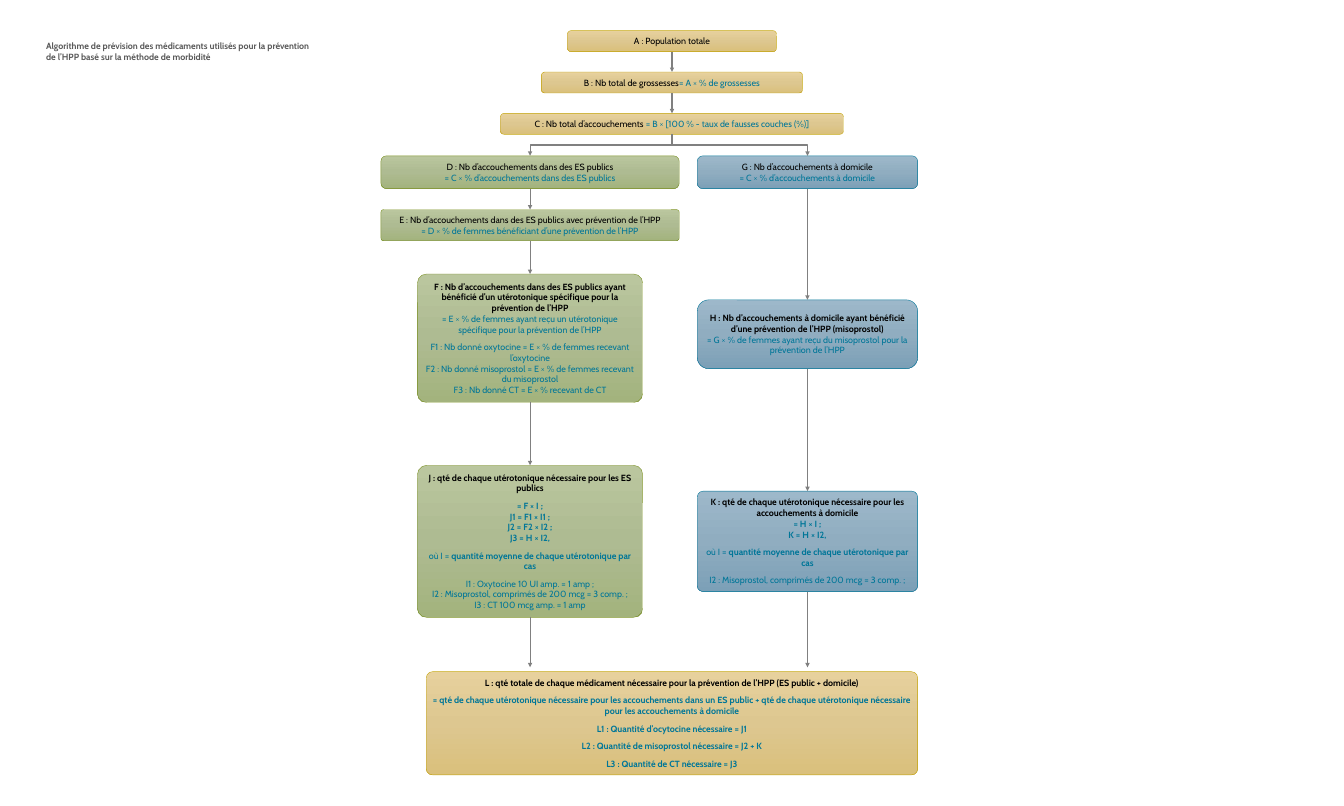
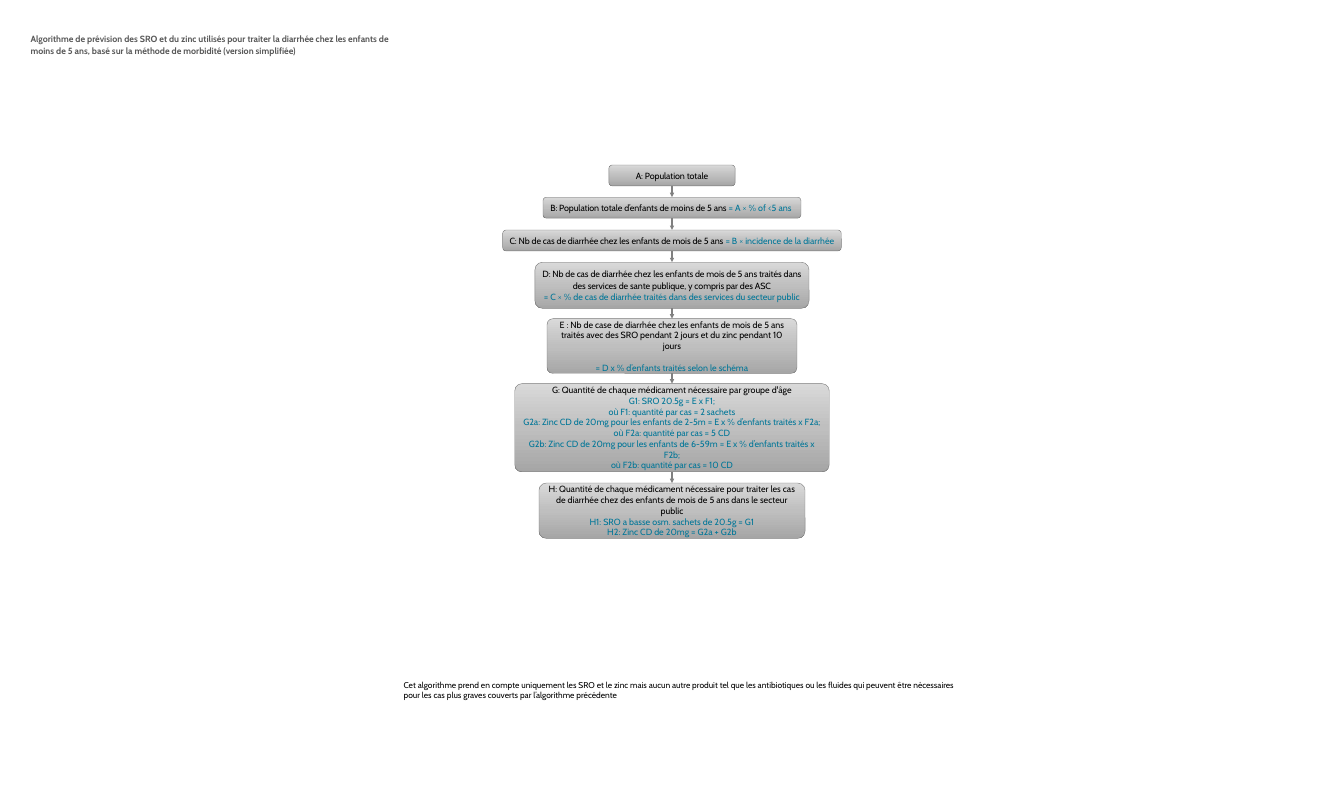
from copy import deepcopy

from lxml import etree
from pptx import Presentation
from pptx.dml.color import RGBColor
from pptx.enum.shapes import MSO_CONNECTOR, MSO_SHAPE
from pptx.enum.text import MSO_ANCHOR, PP_ALIGN
from pptx.oxml.ns import qn
from pptx.util import Inches, Pt

# Shared style
STRAIGHT, ELBOW = MSO_CONNECTOR.STRAIGHT, MSO_CONNECTOR.ELBOW
ROUND = MSO_SHAPE.ROUNDED_RECTANGLE
MIDDLE, TOP = MSO_ANCHOR.MIDDLE, MSO_ANCHOR.TOP
CENTER, LEFT = PP_ALIGN.CENTER, PP_ALIGN.LEFT
FONT = "Cabin"
rgb = RGBColor.from_string
INK, BLUE, HEAD, ROPE = map(rgb, ("000000", "007698", "595959", "808080"))

# Palettes: three gradient stops, then the outline
GOLD = tuple(map(rgb, ("E7D19D", "DDC790", "DAC07C", "C2A204")))
GREEN = tuple(map(rgb, ("BAC69E", "AEBB92", "A3B37D", "788E1E")))
SEA = tuple(map(rgb, ("9DB8CA", "90ADC0", "7CA0B7", "007698")))
GRAY = tuple(map(rgb, ("D9D9D9", "BFBFBF", "A6A6A6", "737373")))

# Text formats
PLAIN = {}
TIGHT = {"track": -0.1}
BOLD = {"bold": True}
CALC = {"color": BLUE}
STRONG = {"color": BLUE, "bold": True}
ARIAL = {"color": BLUE, "font": "Arial"}
TITLE = {"color": HEAD, "bold": True}


def write(para, text, color=INK, bold=False, font=FONT, size=12, track=0):
    """Add text to a paragraph; a newline becomes a line break."""
    for num, line in enumerate(text.split("\n")):
        if num:
            para.add_line_break()
        if line:
            run = para.add_run()
            run.text = line
            run.font.name, run.font.size = font, Pt(size)
            run.font.bold = bold
            run.font.color.rgb = color
            if track:
                run._r.get_or_add_rPr().set("spc", str(round(track * 100)))


class Deck:
    def __init__(self):
        self.prs = Presentation()
        self.prs.slide_width, self.prs.slide_height = Inches(25), Inches(15)
        self.slide = None

    def start(self):
        self.slide = self.prs.slides.add_slide(self.prs.slide_layouts[6])

    def fill(self, shape, paras, align, after=0, lead=None):
        frame = shape.text_frame
        frame.word_wrap = True
        for num, parts in enumerate(paras):
            para = frame.add_paragraph() if num else frame.paragraphs[0]
            para.alignment = align
            para.space_after = Pt(after)
            if lead:
                para.line_spacing = lead
            for text, form in parts:
                write(para, text, **form)

    def box(self, mid, top, width, height, look, paras, curve=0.1667, **gaps):
        """Rounded box centred on mid, with a vertical gradient."""
        shape = self.slide.shapes.add_shape(
            ROUND, Inches(mid - width / 2), Inches(top), Inches(width), Inches(height))
        shape.adjustments[0] = curve
        shape.shadow.inherit = False
        shape.fill.gradient()
        shape.fill.gradient_angle = 270
        stops = shape._element.spPr.find(qn("a:gradFill")).find(qn("a:gsLst"))
        stops.insert(1, deepcopy(stops[0]))
        for stop, color, place in zip(shape.fill.gradient_stops, look, (0, 0.5, 1)):
            stop.color.rgb, stop.position = color, place
        shape.line.color.rgb, shape.line.width = look[3], Pt(0.5)
        frame = shape.text_frame
        frame.vertical_anchor = MIDDLE
        frame.margin_left = frame.margin_right = Inches(0.07)
        frame.margin_top = frame.margin_bottom = Inches(0.07)
        self.fill(shape, paras, CENTER, **gaps)
        return shape

    def note(self, left, top, width, height, text, lead=None, **form):
        shape = self.slide.shapes.add_textbox(
            Inches(left), Inches(top), Inches(width), Inches(height))
        shape.text_frame.vertical_anchor = TOP
        self.fill(shape, [[(text, form)]], LEFT, lead=lead)

    def wire(self, kind, *ends):
        line = self.slide.shapes.add_connector(kind, *map(int, ends))
        line.line.color.rgb, line.line.width = ROPE, Pt(1.5)
        props = line._element.spPr
        etree.SubElement(props.find(qn("a:ln")), qn("a:tailEnd"), type="triangle")
        etree.SubElement(props, qn("a:effectLst"))
        return line

    def link(self, *boxes):
        """Straight arrows down a chain of boxes."""
        for high, low in zip(boxes, boxes[1:]):
            line = self.wire(STRAIGHT, 0, 0, 0, 0)
            line.begin_connect(high, 2)
            line.end_connect(low, 0)

    def drop(self, box, end):
        """Arrow from the bottom of a box to a free height."""
        mid = box.left + box.width // 2
        line = self.wire(STRAIGHT, mid, box.top + box.height, mid, Inches(end))
        line.begin_connect(box, 2)

    def bend(self, high, low):
        """Elbow arrow that leaves downwards: a turned connector."""
        x1, x2 = (box.left + box.width / 2 for box in (high, low))
        y1, y2 = high.top + high.height, low.top
        mid, level = (x1 + x2) / 2, (y1 + y2) / 2
        side = 1 if x2 > x1 else -1
        half, reach = side * (y2 - y1) / 2, abs(x2 - x1) / 2
        line = self.wire(ELBOW, mid + half, level - reach, mid - half, level + reach)
        turn = 270 if side > 0 else 90
        line._element.spPr.find(qn("a:xfrm")).set("rot", str(turn * 60000))


def birth(deck):
    """Medicines for the prevention of HPP."""
    deck.start()
    mid, west, east = 12.5, 9.86, 15.02

    def box(*spot, **more):
        return deck.box(*spot, after=9, **more)

    # Trunk
    a = box(mid, 0.57, 3.89, 0.39, GOLD, [[("A : Population totale", PLAIN)]])
    b = box(mid, 1.34, 4.86, 0.39, GOLD, [[
        ("B : Nb total de grossesses", PLAIN), ("= A × % de grossesses", CALC)]])
    c = box(mid, 2.11, 6.38, 0.39, GOLD, [[
        ("C : Nb total d’accouchements ", PLAIN),
        ("= B × [100 % - taux de fausses couches (%)]", CALC)]])

    # Public branch
    d = box(west, 2.9, 5.55, 0.61, GREEN, [[
        ("D : Nb d’accouchements dans des ES publics\n", PLAIN),
        ("= C × % d’accouchements dans des ES publics", CALC)]])
    e = box(west, 3.9, 5.55, 0.58, GREEN, [[
        ("E : Nb d’accouchements dans des ES publics avec prévention de l’HPP\n", PLAIN),
        ("= D × % de femmes bénéficiant d’une prévention de l’HPP", CALC)]], curve=0.09)
    f = box(west, 5.1, 4.19, 2.39, GREEN, [
        [("F : Nb d’accouchements dans des ES publics ayant bénéficié d’un "
          "utérotonique spécifique pour la prévention de l’HPP\n", BOLD),
         ("= E × % de femmes ayant reçu un utérotonique spécifique pour la "
          "prévention de l’HPP", CALC)],
        [("F1 : Nb donné oxytocine = E × % de femmes recevant l’oxytocine\n"
          "F2 : Nb donné misoprostol = E × % de femmes recevant du misoprostol\n"
          "F3 : Nb donné CT = E × % recevant de CT", CALC)]], curve=0.07)
    mean = [("où I = ", CALC),
            ("quantité moyenne de chaque utérotonique par cas", STRONG)]
    j = box(west, 8.66, 4.19, 2.83, GREEN, [
        [("J : qté de chaque utérotonique nécessaire pour les ES publics", BOLD)],
        [("= F × I ;\nJ1 = F1 × I1 ;\nJ2 = F2 × I2 ;\nJ3 = H × I2,", STRONG)],
        mean,
        [("I1 : Oxytocine 10 UI amp. = 1 amp ;\n"
          "I2 : Misoprostol, comprimés de 200 mcg = 3 comp. ;\n"
          "I3 : CT 100 mcg amp. = 1 amp", CALC)]], curve=0.06)

    # Home branch
    g = box(east, 2.9, 4.1, 0.61, SEA, [[
        ("G : Nb d’accouchements à domicile\n", PLAIN),
        ("= C × % d’accouchements à domicile", CALC)]])
    h = box(east, 5.58, 4.1, 1.28, SEA, [[
        ("H : Nb d’accouchements à domicile ayant bénéficié d’une prévention "
         "de l’HPP (misoprostol)\n", BOLD),
        ("= G × % de femmes ayant reçu du misoprostol pour la prévention de l’HPP",
         CALC)]])
    k = box(east, 9.14, 4.1, 1.87, SEA, [
        [("K : qté de chaque utérotonique nécessaire pour les accouchements "
          "à domicile\n", BOLD),
         ("= H × I ;\nK = H × I2,", STRONG)],
        mean,
        [("I2 : Misoprostol, comprimés de 200 mcg = 3 comp. ;", CALC)]], curve=0.06)

    # Total
    box(mid, 12.5, 9.14, 1.92, GOLD, [
        [("L : qté totale de chaque médicament nécessaire pour la prévention de "
          "l’HPP (ES public + domicile)", BOLD)],
        [("= qté de chaque utérotonique nécessaire pour les accouchements dans un "
          "ES public + qté de chaque utérotonique nécessaire pour les accouchements "
          "à domicile", STRONG)],
        [("L1 : Quantité d’ocytocine nécessaire = J1", STRONG)],
        [("L2 : Quantité de misoprostol nécessaire = J2 + K", STRONG)],
        [("L3 : Quantité de CT nécessaire = J3", STRONG)]], curve=0.06)

    # Arrows
    deck.link(a, b, c)
    deck.link(d, e, f, j)
    deck.link(g, h, k)
    for low in (d, g):
        deck.bend(c, low)
    for last in (j, k):
        deck.drop(last, 12.42)

    deck.note(0.76, 0.71, 5.14, 0.5,
              "Algorithme de prévision des médicaments utilisés pour la prévention "
              "de l’HPP basé sur la méthode de morbidité", **TITLE)


def child(deck):
    """ORS and zinc for children with diarrhoea."""
    deck.start()

    def dose(code, count):
        return [("o", CALC), ("ù", ARIAL),
                (f" {code}: quantité par cas = {count}", CALC)]

    # Boxes from top to bottom: top, width, height, curve, line spacing, text
    steps = [
        (3.07, 2.35, 0.39, 0.1667, 1.07, [[("A: Population totale", TIGHT)]]),
        (3.67, 4.8, 0.39, 0.1667, 1.07, [[
            ("B: Population totale d’enfants de moins de 5 ans ", TIGHT),
            ("= A × % of <5 ans ", CALC)]]),
        (4.28, 6.3, 0.39, 0.1667, 1.06, [[
            ("C: Nb de cas de diarrhée chez les enfants de mois de 5 ans ", TIGHT),
            ("= B × incidence de la diarrhée", CALC)]]),
        (4.88, 5.1, 0.86, 0.1667, 1.06, [
            [("D: Nb de cas de diarrhée chez les enfants de mois de 5 ans traités "
              "dans des services de sante publique, y compris par des ASC", TIGHT)],
            [("= C × % de cas de diarrhée traités dans des services du secteur "
              "public", CALC)]]),
        (5.93, 4.65, 1.02, 0.11, 1, [
            [("E : Nb de case de diarrhée chez les enfants de mois de 5 ans traités "
              "avec des SRO pendant 2 jours et du zinc pendant 10 jours", PLAIN)],
            [("= D x % d’enfants traités selon le schéma", CALC)]]),
        (7.14, 5.85, 1.64, 0.08, 1, [
            [("G: Quantité de chaque médicament nécessaire par groupe d'âge", PLAIN)],
            [("G1: SRO 20.5g = E x F1;", CALC)],
            dose("F1", "2 sachets"),
            [("G2a: Zinc CD de 20mg pour les enfants de 2-5m = E x % d’enfants "
              "traités x F2a;", CALC)],
            dose("F2a", "5 CD"),
            [("G2b: Zinc CD de 20mg pour les enfants de 6-59m = E x % d’enfants "
              "traités x F2b;", CALC)],
            dose("F2b", "10 CD")]),
        (8.99, 4.95, 1.03, 0.13, 1, [
            [("H: Quantité de chaque médicament nécessaire pour traiter les cas de "
              "diarrhée chez des enfants de mois de 5 ans dans le secteur public",
              PLAIN)],
            [("H1: SRO a basse osm. sachets de 20.5g = G1", CALC)],
            [("H2: Zinc CD de 20mg = G2a + G2b", CALC)]]),
    ]
    chain = [deck.box(12.5, top, width, height, GRAY, paras, curve=curve, lead=lead)
             for top, width, height, curve, lead, paras in steps]
    chain[4].text_frame.paragraphs[1].space_before = Pt(14.4)
    deck.link(*chain)

    # Footnote and title
    deck.note(7.41, 12.6, 10.59, 0.48,
              "Cet algorithme prend en compte uniquement les SRO et le zinc mais aucun "
              "autre produit tel que les antibiotiques ou les fluides qui peuvent être "
              "nécessaires pour les cas plus graves couverts par l’algorithme "
              "précédente", size=11.3)
    deck.note(0.47, 0.54, 6.93, 0.55,
              "Algorithme de prévision des SRO et du zinc utilisés pour traiter la "
              "diarrhée chez les enfants de moins de 5 ans, basé sur la méthode de "
              "morbidité (version simplifiée)", lead=1.15, **TITLE)


def main():
    deck = Deck()
    birth(deck)
    child(deck)
    deck.prs.save("out.pptx")


if __name__ == "__main__":
    main()
